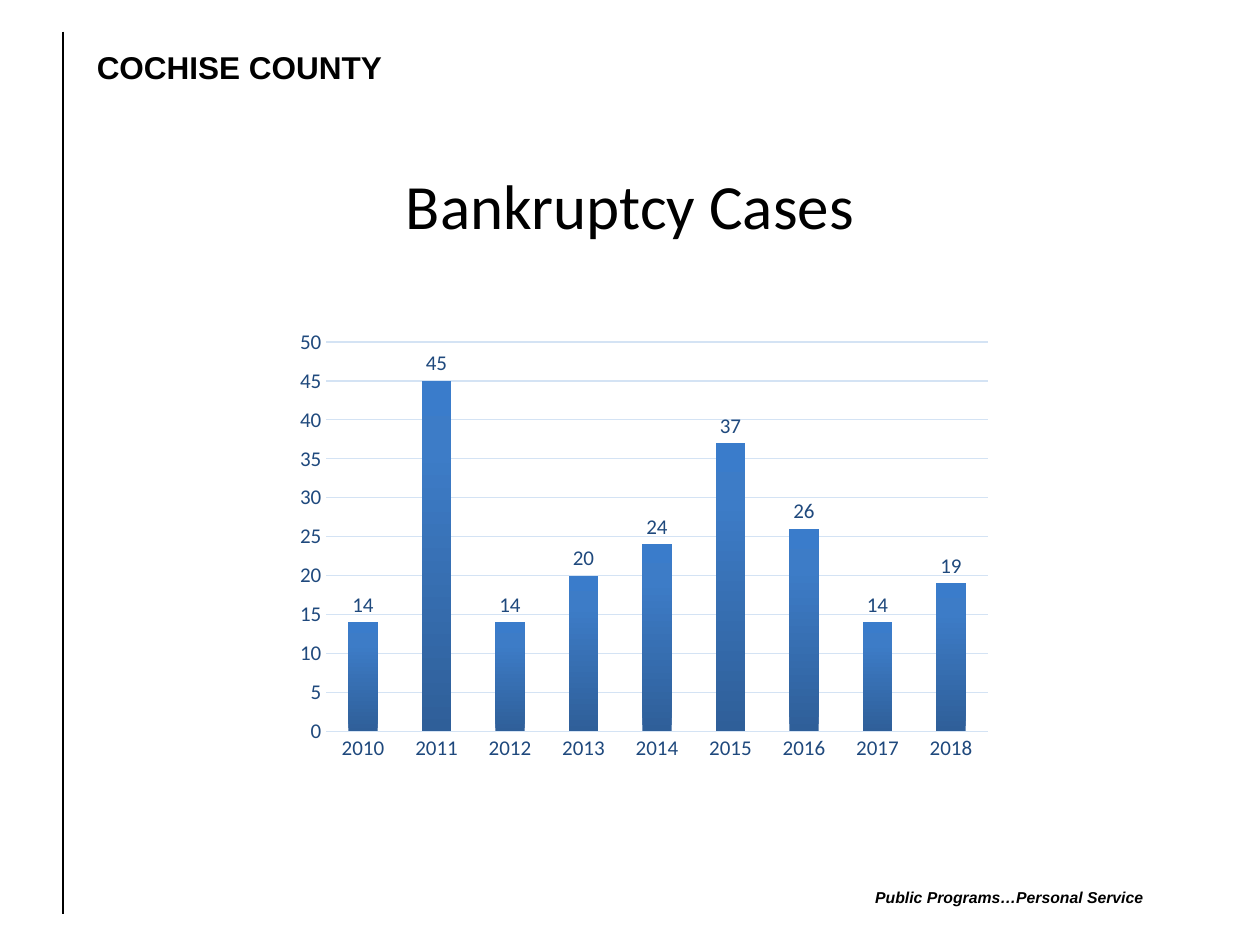
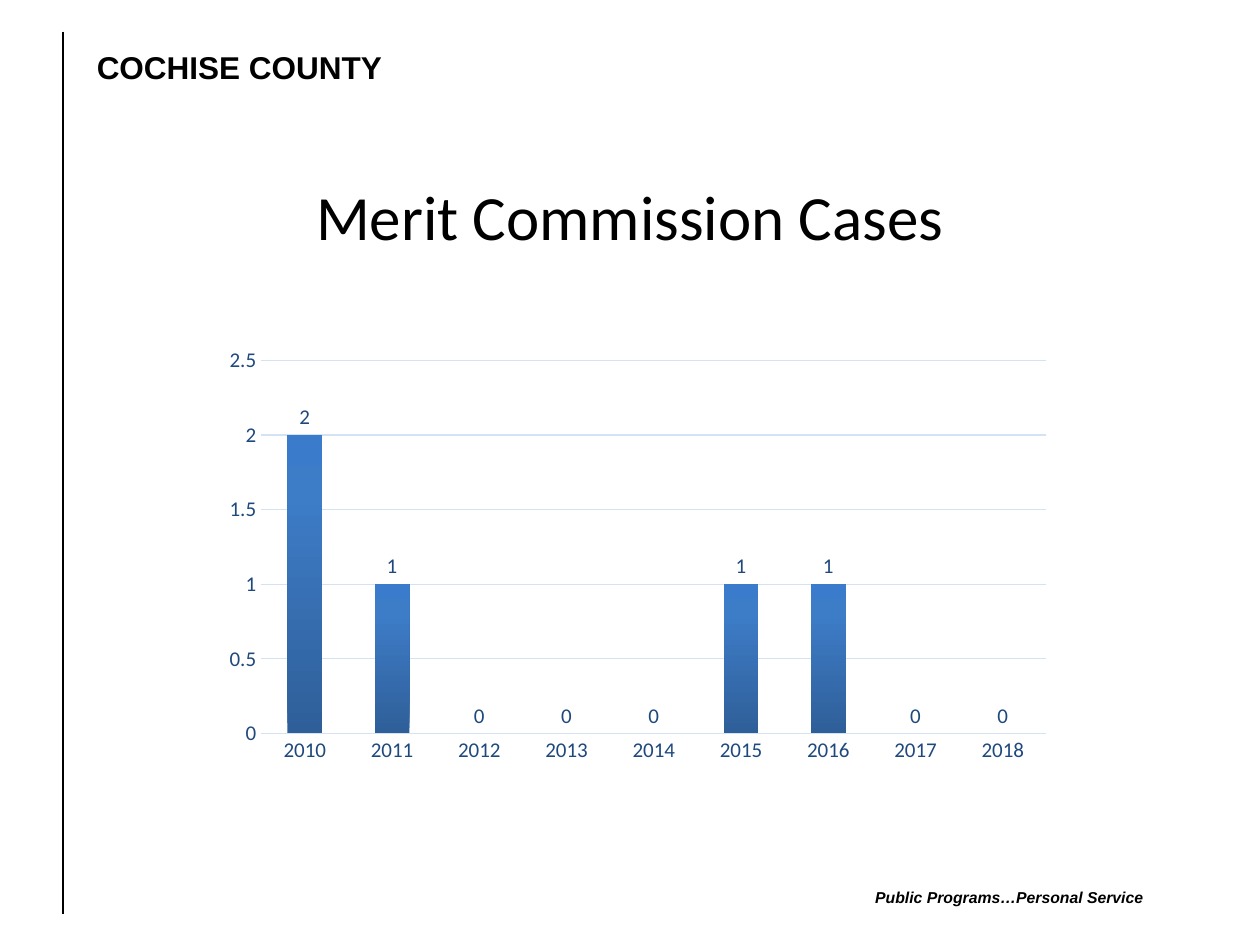
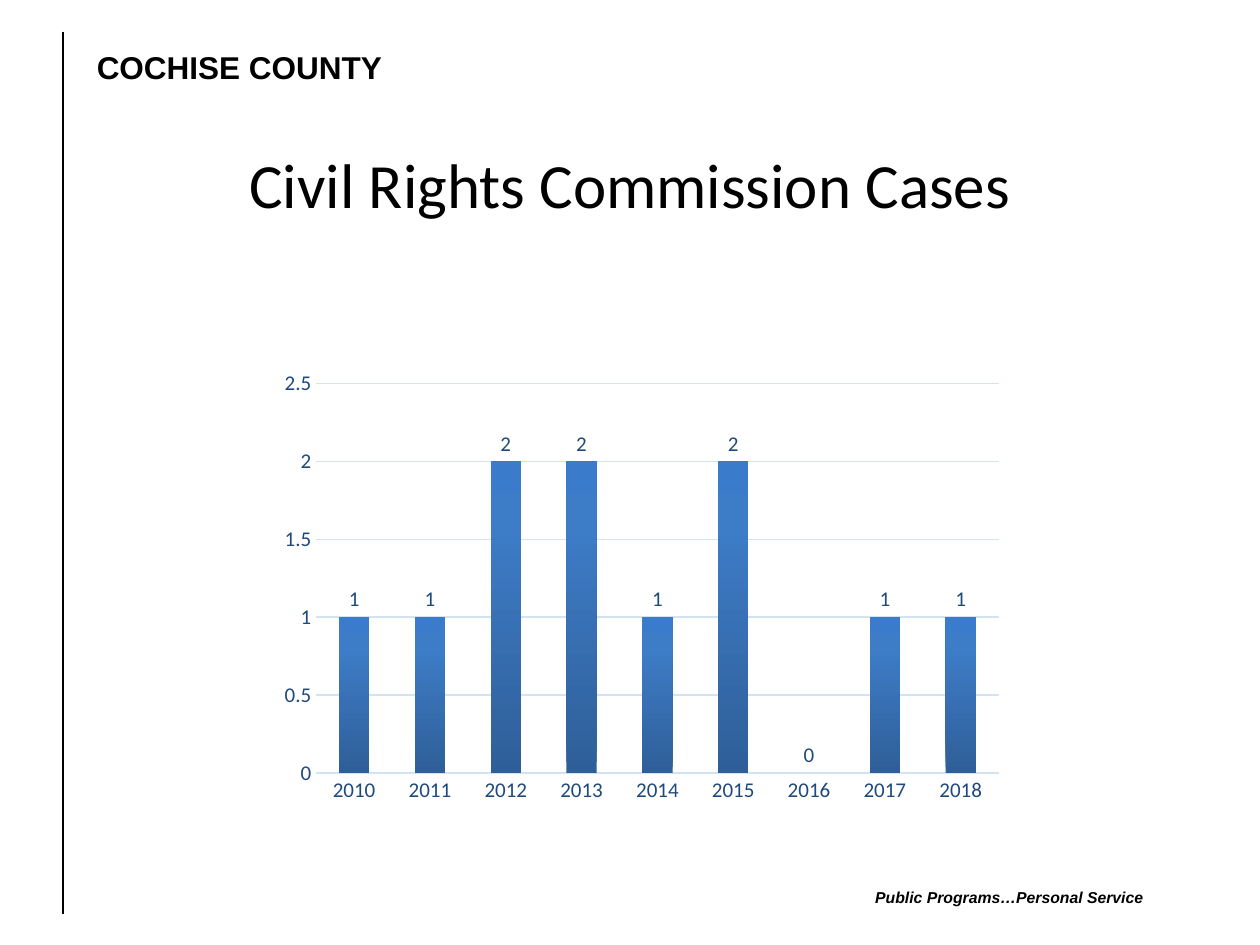
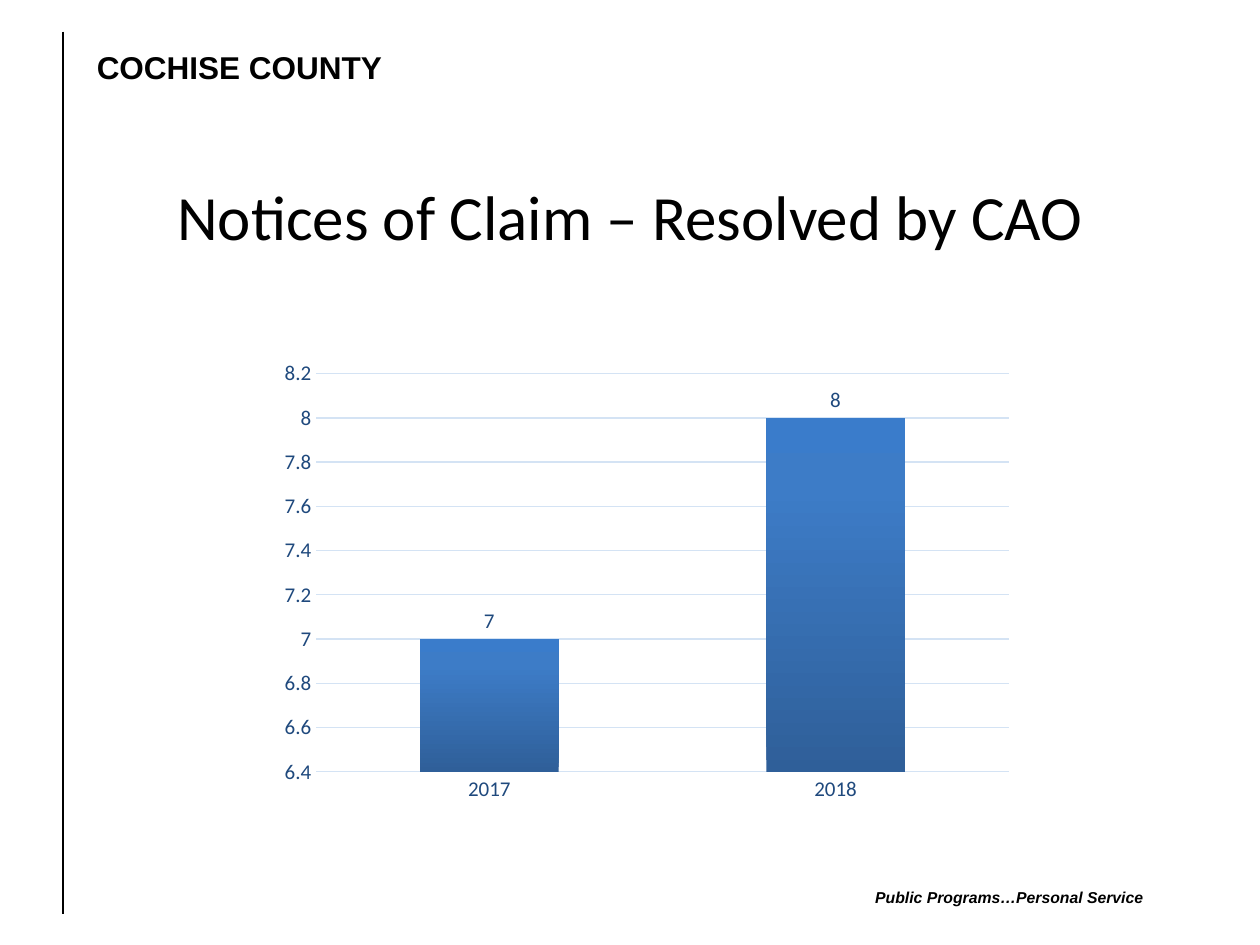
"""Build four slides of yearly county case counts as column charts."""
import copy

import pptx
import pptx.chart.data
import pptx.dml.color
import pptx.enum.chart
import pptx.enum.shapes
import pptx.enum.text
import pptx.oxml
import pptx.oxml.ns
import pptx.util

Inches = pptx.util.Inches
Pt = pptx.util.Pt
RGB = pptx.dml.color.RGBColor
ALIGN = pptx.enum.text.PP_ALIGN
ANCHOR = pptx.enum.text.MSO_ANCHOR
qn = pptx.oxml.ns.qn

BLACK = RGB(0x00, 0x00, 0x00)
NAVY = RGB(0x1F, 0x49, 0x7D)
PALE = RGB(0xD4, 0xE3, 0xF4)
STOPS = [
    (0, RGB(0x2F, 0x5F, 0x99)),
    (0.8, RGB(0x3D, 0x7C, 0xC7)),
    (1, RGB(0x3A, 0x7C, 0xCB)),
]
WIDE, HIGH = 10, 7.5
HEAD = "COCHISE COUNTY"
FOOT = "Public Programs…Personal Service"
LAST = 2018

SLIDES = [
    {"title": "Bankruptcy Cases", "top": 1,
     "vals": [14, 45, 14, 20, 24, 37, 26, 14, 19], "scale": (0, 50, 5),
     "box": (1.83, 2, 6.67, 4.44), "plot": (0.114, 0.161, 0.787, 0.696)},
    {"title": "Merit Commission Cases", "top": 1.08,
     "vals": [2, 1, 0, 0, 0, 1, 1, 0, 0], "scale": (0, 2.5, 0.5),
     "box": (1.17, 2.08, 7.92, 4.37), "plot": (0.114, 0.179, 0.787, 0.677)},
    {"title": "Civil Rights Commission Cases", "top": 0.83,
     "vals": [1, 1, 2, 2, 1, 2, 0, 1, 1], "scale": (0, 2.5, 0.5),
     "box": (1.75, 2.33, 6.67, 4.44), "plot": (0.114, 0.161, 0.812, 0.696)},
    {"title": "Notices of Claim – Resolved by CAO", "top": 1.08,
     "vals": [7, 8], "scale": (6.4, 8.2, 0.2),
     "box": (1.75, 2.42, 6.67, 4.33), "plot": (0.114, 0.126, 0.824, 0.73)},
]


def style(font, size, color, name="Calibri"):
    font.size, font.name = Pt(size), name
    font.color.rgb = color


def write(slide, words, box, size, name, align=ALIGN.LEFT,
          anchor=ANCHOR.TOP, bold=False, slant=False):
    frame = slide.shapes.add_textbox(*map(Inches, box)).text_frame
    frame.word_wrap = True
    frame.vertical_anchor = anchor
    para = frame.paragraphs[0]
    para.alignment = align
    run = para.add_run()
    run.text = words
    style(run.font, size, BLACK, name)
    run.font.bold, run.font.italic = bold, slant


def add_frame(slide):
    write(slide, HEAD, (0.67, 0.33, 5.33, 0.4), 18, "Arial", bold=True)
    rule = slide.shapes.add_connector(
        pptx.enum.shapes.MSO_CONNECTOR.STRAIGHT,
        *map(Inches, (0.5, 0.25, 0.5, HIGH - 0.25)))
    rule.line.color.rgb = BLACK
    rule.line.width = Pt(0.75)
    props = rule._element.spPr
    props.append(props.makeelement(qn("a:effectLst"), {}))
    write(slide, FOOT, (5.92, 7, 3.25, 0.25), 9, "Arial", ALIGN.RIGHT,
          bold=True, slant=True)


def place_plot(chart, plot):
    area = chart._chartSpace.chart.plotArea
    for old in area.findall(qn("c:layout")):
        area.remove(old)
    keys = ["layoutTarget", "xMode", "yMode", "x", "y", "w", "h"]
    vals = ["inner", "edge", "edge", *plot]
    parts = "".join(f'<c:{key} val="{val}"/>' for key, val in zip(keys, vals))
    area.insert(0, pptx.oxml.parse_xml(
        f'<c:layout {pptx.oxml.ns.nsdecls("c")}>'
        f"<c:manualLayout>{parts}</c:manualLayout></c:layout>"))


def shade(series):
    fill = series.format.fill
    fill.gradient()
    fill.gradient_angle = 90
    stops = next(series._element.iter(qn("a:gsLst")))
    stops.append(copy.deepcopy(stops[0]))
    for stop, (place, color) in zip(fill.gradient_stops, STOPS):
        stop.position = place
        stop.color.rgb = color


def add_bars(slide, item):
    vals = item["vals"]
    data = pptx.chart.data.CategoryChartData()
    data.categories = [str(LAST - len(vals) + 1 + n) for n in range(len(vals))]
    data.add_series("Series 1", vals)
    kinds = pptx.enum.chart
    chart = slide.shapes.add_chart(
        kinds.XL_CHART_TYPE.COLUMN_CLUSTERED,
        *map(Inches, item["box"]), data).chart
    style(chart.font, 10, BLACK)
    chart.has_title = chart.has_legend = False
    place_plot(chart, item["plot"])

    years, count = chart.category_axis, chart.value_axis
    for axis in (years, count):
        style(axis.tick_labels.font, 12, NAVY)
        axis.major_tick_mark = axis.minor_tick_mark = kinds.XL_TICK_MARK.NONE
    count.minimum_scale, count.maximum_scale, count.major_unit = item["scale"]
    count.format.line.fill.background()
    for part in (years, count.major_gridlines):
        part.format.line.color.rgb = PALE
        part.format.line.width = Pt(0.75)

    bars = chart.plots[0]
    bars.gap_width = 150
    bars.vary_by_categories = False
    shade(bars.series[0])
    bars.has_data_labels = True
    marks = bars.data_labels
    marks.show_value = True
    marks.position = kinds.XL_LABEL_POSITION.OUTSIDE_END
    style(marks.font, 12, NAVY)


def main():
    deck = pptx.Presentation()
    deck.slide_width, deck.slide_height = Inches(WIDE), Inches(HIGH)
    for item in SLIDES:
        slide = deck.slides.add_slide(deck.slide_layouts[6])
        add_frame(slide)
        write(slide, item["title"], (0.5, item["top"], WIDE - 1, 1.25), 36,
              "Calibri", ALIGN.CENTER, ANCHOR.MIDDLE)
        add_bars(slide, item)
    deck.save("out.pptx")


if __name__ == "__main__":
    main()
